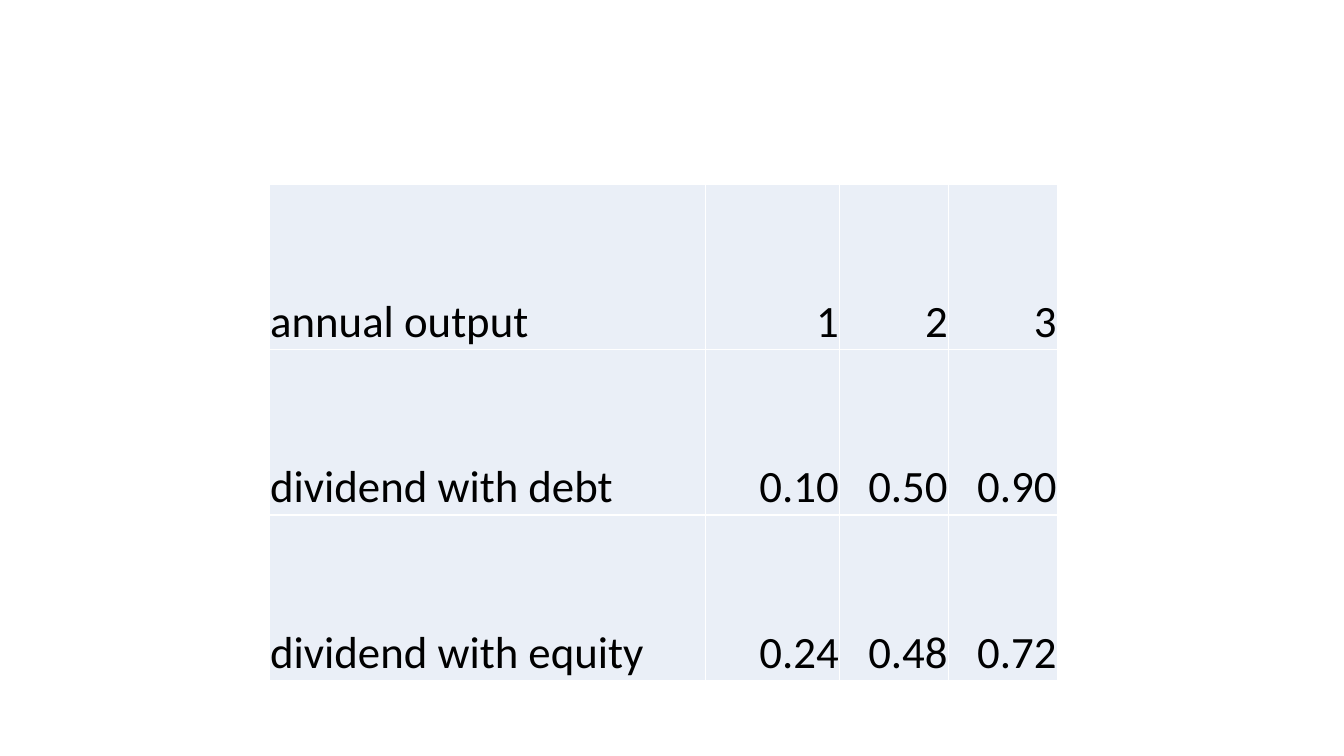
from lxml import etree
from pptx import Presentation, util as u
from pptx.dml.color import RGBColor
from pptx.enum import text
from pptx.oxml.ns import qn

CELL_FILL = "EAEFF7"
BORDER = "FFFFFF"
INK = "000000"
COLUMN_WIDTHS = [4.33, 1.33, 1.08, 1.08]
ROW_HEIGHT = 1.64
DIVIDENDS = [
    ["annual output", "1", "2", "3"],
    ["dividend with debt", "0.10", "0.50", "0.90"],
    ["dividend with equity", "0.24", "0.48", "0.72"],
]


def color(value):
    return RGBColor.from_string(value)


def write(frame, content, size=32, font="Calibri", ink=INK, align=text.PP_ALIGN.LEFT):
    paragraph = frame.paragraphs[0]
    paragraph.alignment = align
    run = paragraph.add_run()
    run.text = content
    run.font.size = u.Pt(size)
    run.font.name = font
    run.font.color.rgb = color(ink)


def add_borders(cell, line_color, width):
    """Draw all four sides; call before filling, as the XML order requires."""
    properties = cell._tc.get_or_add_tcPr()
    for side in ("lnL", "lnR", "lnT", "lnB"):
        line = etree.SubElement(properties, qn(f"a:{side}"), w=str(u.Pt(width)))
        fill = etree.SubElement(line, qn("a:solidFill"))
        etree.SubElement(fill, qn("a:srgbClr"), val=line_color)


def format_cell(cell):
    cell.margin_left = cell.margin_right = cell.margin_top = u.Inches(0.01)
    cell.margin_bottom = 0
    cell.vertical_anchor = text.MSO_ANCHOR.BOTTOM
    add_borders(cell, BORDER, 1)
    cell.fill.solid()
    cell.fill.fore_color.rgb = color(CELL_FILL)


def add_dividend_table(slide, left, top):
    table = slide.shapes.add_table(
        len(DIVIDENDS), len(COLUMN_WIDTHS), u.Inches(left), u.Inches(top),
        u.Inches(sum(COLUMN_WIDTHS)), u.Inches(ROW_HEIGHT * len(DIVIDENDS))).table
    table.first_row = table.horz_banding = False
    for column, width in zip(table.columns, COLUMN_WIDTHS):
        column.width = u.Inches(width)
    for r, values in enumerate(DIVIDENDS):
        table.rows[r].height = u.Inches(ROW_HEIGHT)
        for c, value in enumerate(values):
            cell = table.cell(r, c)
            format_cell(cell)
            align = text.PP_ALIGN.RIGHT if c else text.PP_ALIGN.LEFT
            write(cell.text_frame, value, align=align)


def main():
    deck = Presentation()
    deck.slide_width, deck.slide_height = u.Inches(13.33), u.Inches(7.5)
    slide = deck.slides.add_slide(deck.slide_layouts[6])
    add_dividend_table(slide, 2.67, 1.83)
    deck.save("out.pptx")


if __name__ == "__main__":
    main()
